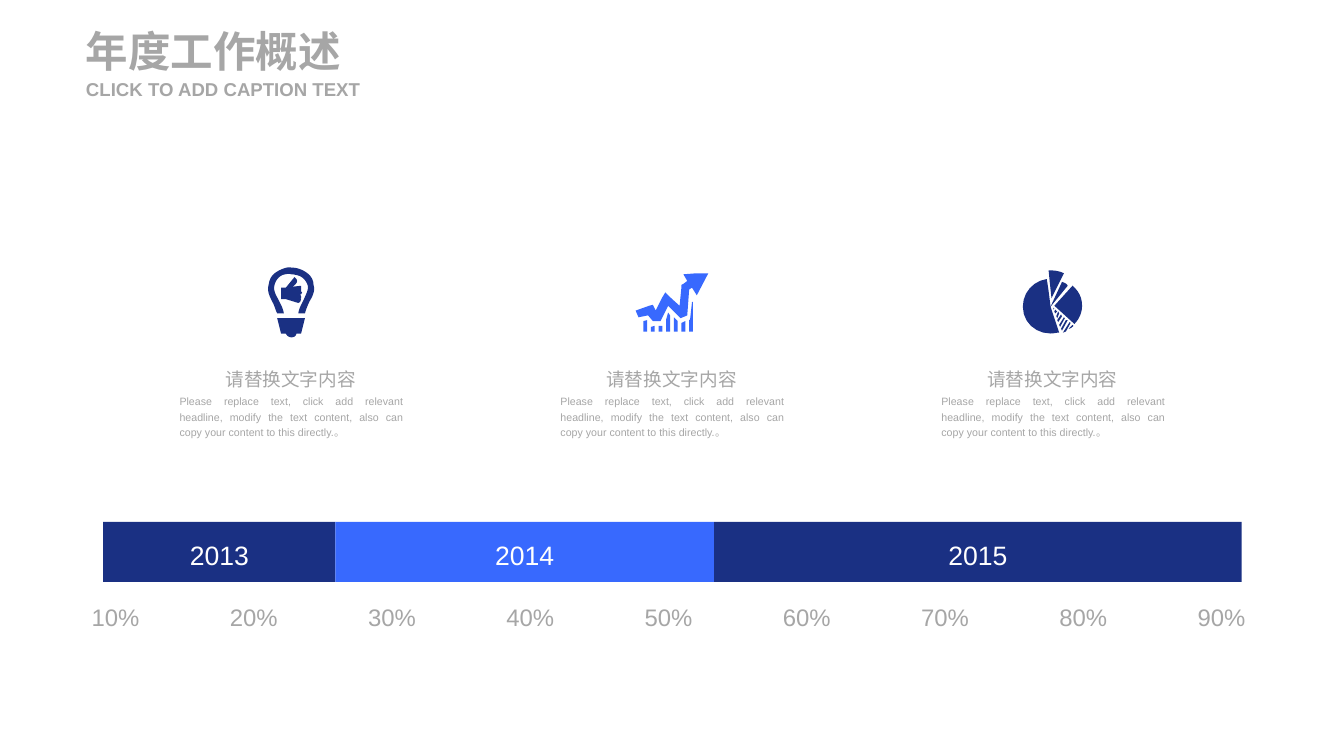
from pptx import Presentation
from pptx import util as u
from pptx.dml.color import RGBColor
from pptx.enum import shapes, text

NAVY = RGBColor(0x1A, 0x30, 0x83)
BLUE = RGBColor(0x38, 0x69, 0xFE)
GREY = RGBColor(0xA6, 0xA6, 0xA6)
WHITE = RGBColor(0xFF, 0xFF, 0xFF)

HEADING = "请替换文字内容"
BODY = ("Please replace text, click add relevant headline, modify the text "
        "content, also can copy your content to this directly.。")

JUSTIFIED = {"alignment": text.PP_ALIGN.JUSTIFY, "line_spacing": 1.2}
CENTERED = {"alignment": text.PP_ALIGN.CENTER, "line_spacing": 1.2}
GROW = {"auto_size": text.MSO_AUTO_SIZE.SHAPE_TO_FIT_TEXT}
NO_WRAP = {**GROW, "word_wrap": False}
WRAP = {**GROW, "word_wrap": True}
MIDDLE = {"vertical_anchor": text.MSO_ANCHOR.MIDDLE, "word_wrap": True}
TITLE = {**WRAP, **MIDDLE, "margin_left": 0, "margin_top": 0,
         "margin_right": 0, "margin_bottom": 0}

BULB = [
    [(11, 54), (40, 54), (36, 70), (31, 70), (31, 72, 29, 74, 26, 74),
     (23, 74, 21, 72, 20, 70), (15, 70)],
    [(36, 20), (36, 26), (37, 27), (36, 29), (35, 29), (36, 31), (36, 33),
     (35, 34), (36, 34), (35, 37), (33, 38), (20, 34), (15, 34), (15, 22),
     (20, 22), (29, 11), (35, 15, 30, 19, 27, 21)],
    [(11, 49), (18, 49), (17, 43, 14, 38, 12, 34), (9, 29, 7, 24, 8, 20),
     (9, 15, 12, 11, 16, 9), (19, 8, 22, 7, 26, 8), (29, 8, 32, 9, 35, 10),
     (39, 12, 42, 16, 43, 20), (44, 24, 41, 29, 39, 34),
     (37, 38, 34, 43, 33, 49), (40, 49), (41, 45, 43, 40, 45, 36),
     (48, 31, 51, 25, 49, 19), (49, 12, 44, 7, 38, 4), (34, 2, 30, 1, 26, 1),
     (22, 0, 17, 2, 13, 4), (7, 7, 3, 11, 2, 19), (0, 25, 3, 31, 6, 37),
     (8, 40, 9, 45, 11, 49)],
]
GROWTH = [
    [(76, 0), (64, 23), (59, 15), (56, 17), (54, 44), (47, 47), (34, 34),
     (26, 50), (18, 50), (13, 44), (3, 46), (0, 39), (14, 34), (18, 33),
     (21, 39), (28, 25), (31, 20), (35, 24), (46, 34), (48, 14), (48, 12),
     (50, 11), (54, 8), (50, 1), (63, 0)],
    [(8, 61), (12, 61), (12, 49), (8, 50)],
    [(16, 61), (20, 61), (20, 55), (16, 56)],
    [(24, 61), (28, 61), (28, 55), (24, 55)],
    [(32, 61), (36, 61), (36, 44), (34, 41), (32, 48)],
    [(40, 61), (44, 61), (44, 50), (40, 46)],
    [(48, 61), (52, 61), (52, 50), (48, 52)],
    [(56, 61), (60, 61), (60, 30), (59, 30), (57, 48), (56, 49)],
]
PIE = [
    [(52, 16), (58, 21, 62, 28, 62, 37), (62, 44, 59, 51, 54, 56), (33, 37)],
    [(53, 58), (52, 59, 50, 61, 48, 61), (52, 57)],
    [(45, 64), (50, 55), (49, 54), (42, 65), (43, 65, 44, 64, 45, 64)],
    [(41, 63), (47, 52), (45, 52), (40, 61)],
    [(39, 59), (44, 50), (43, 49), (38, 57)],
    [(37, 54), (41, 48), (40, 46), (36, 52)],
    [(36, 50), (38, 45), (37, 43), (35, 48)],
    [(34, 45), (36, 43), (34, 41), (33, 43)],
    [(32, 41), (32, 39), (33, 40)],
    [(41, 12), (29, 38), (29, 38, 27, 20, 25, 9), (11, 11, 0, 23, 0, 38),
     (0, 54, 13, 66, 29, 66), (32, 66, 36, 65, 38, 65), (29, 38), (47, 16),
     (46, 14, 44, 13, 41, 12)],
    [(30, 0), (27, 0), (28, 11, 30, 29, 30, 29), (43, 3),
     (39, 1, 34, 0, 30, 0)],
]


def apply(obj, values):
    """Set every attribute named in a dict of format values."""
    for name, value in values.items():
        setattr(obj, name, value)


def write(sp, content, size, color, frame, para, bold=False):
    """Put one formatted paragraph into a shape."""
    tf = sp.text_frame
    apply(tf, frame)
    p = tf.paragraphs[0]
    apply(p, para)
    r = p.add_run()
    r.text = content
    apply(r.font, {"name": "Arial", "size": u.Pt(size), "bold": bold})
    r.font.color.rgb = color


def add_text(parent, box, *args, **kwargs):
    """Add a text box at a left, top, width, height box in inches."""
    write(parent.add_textbox(*map(u.Inches, box)), *args, **kwargs)


def paint(sp, color):
    """Give a shape a plain fill without line or shadow."""
    sp.shadow.inherit = False
    sp.fill.solid()
    sp.fill.fore_color.rgb = color
    sp.line.fill.background()


def add_bar(parent, left, width, year, color):
    """Add one year segment of the timeline."""
    box = map(u.Inches, (left, 5.46, width, 0.63))
    sp = parent.add_shape(shapes.MSO_SHAPE.RECTANGLE, *box)
    paint(sp, color)
    write(sp, year, 20, WHITE, MIDDLE, CENTERED)


def flatten(contour, steps=6):
    """Turn points and cubic curves in hundredths of an inch into EMU points."""
    points = []
    for item in contour:
        if len(item) == 2:
            points.append(item)
            continue
        curve = [points[-1], item[:2], item[2:4], item[4:]]
        for i in range(1, steps + 1):
            t = i / steps
            weights = ((1 - t) ** 3, 3 * t * (1 - t) ** 2,
                       3 * t ** 2 * (1 - t), t ** 3)
            points.append(tuple(sum(w * pt[axis] for w, pt in zip(weights, curve))
                                for axis in (0, 1)))
    return [(u.Inches(x / 100), u.Inches(y / 100)) for x, y in points]


def add_icon(parent, left, top, contours, color):
    """Draw an icon as one freeform with several contours."""
    first, *rest = map(flatten, contours)
    builder = parent.build_freeform(*first[0])
    builder.add_line_segments(first[1:], close=True)
    for points in rest:
        builder.move_to(*points[0])
        builder.add_line_segments(points[1:], close=True)
    paint(builder.convert_to_shape(u.Inches(left), u.Inches(top)), color)


def add_caption(parent, left):
    """Add a grouped heading and body text."""
    group = parent.add_group_shape().shapes
    add_text(group, (left + 0.48, 3.75, 1.58, 0.36), HEADING, 14, GREY,
             NO_WRAP, JUSTIFIED)
    add_text(group, (left, 4.06, 2.54, 0.59), BODY, 8, GREY, WRAP, JUSTIFIED)


def main():
    """Build the annual overview slide."""
    prs = Presentation()
    apply(prs, {"slide_width": u.Inches(14.06), "slide_height": u.Inches(7.91)})
    s = prs.slides.add_slide(prs.slide_layouts[6]).shapes

    for i in range(9):
        add_text(s, (0.86 + 11.57 * i / 8, 6.2, 0.71, 0.43), f"{10 * (i + 1)}%",
                 18, GREY, NO_WRAP, JUSTIFIED)

    left = 1.08
    for year, width, color in (("2013", 2.43, NAVY), ("2014", 3.96, BLUE),
                               ("2015", 5.52, NAVY)):
        add_bar(s, left, width, year, color)
        left += width

    icons = ((2.79, 2.79, BULB, NAVY), (6.65, 2.86, GROWTH, BLUE),
             (10.7, 2.83, PIE, NAVY))
    for i, icon in enumerate(icons):
        add_icon(s, *icon)
        add_caption(s, 1.78 + 7.97 * i / 2)

    for top, height, content, size in (
            (0.26, 0.54, "年度工作概述", 32),
            (0.81, 0.24, "CLICK TO ADD CAPTION TEXT", 14)):
        add_text(s, (0.9, top, 3.07, height), content, size, GREY, TITLE, {},
                 bold=True)

    prs.save("out.pptx")


if __name__ == "__main__":
    main()
